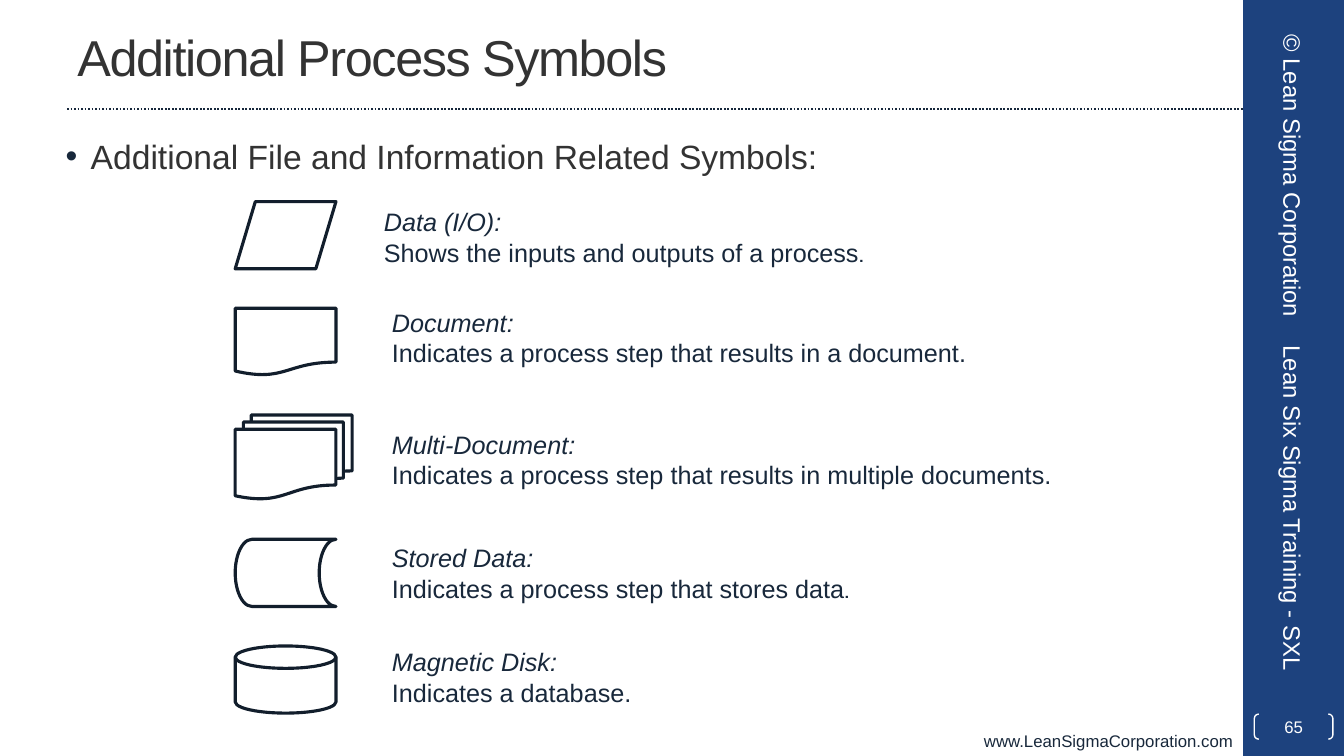
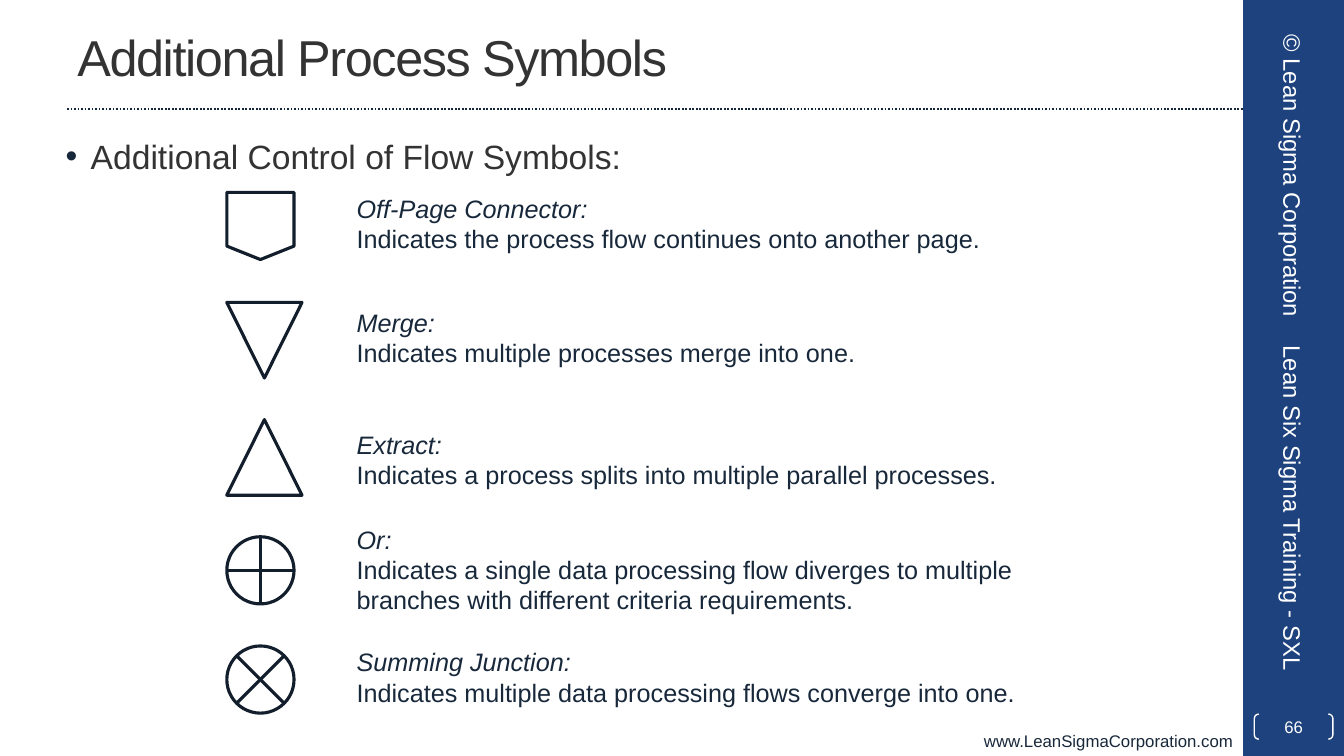
import pptx
import pptx.dml.color
import pptx.enum.dml
import pptx.enum.shapes
import pptx.enum.text
import pptx.oxml.ns
import pptx.util
from lxml import etree

SHAPE = pptx.enum.shapes.MSO_SHAPE
ALIGN = pptx.enum.text.PP_ALIGN
MIDDLE = pptx.enum.text.MSO_ANCHOR.MIDDLE
qn = pptx.oxml.ns.qn

# The grid: 40 columns by 90 rows
COLUMNS, ROWS = 40, 90
WIDTH, HEIGHT = pptx.util.Inches(13.33), pptx.util.Inches(7.5)

COLOURS = {
    "band": "1D427E",
    "rule": "17273B",
    "outline": "121E2C",
    "ink": "18283B",
    "heading": "333333",
    "white": "FFFFFF",
}

# Text styles: colour name, then font attributes
STYLES = {
    "title": ("heading", {"size": 36}),
    "lead": ("heading", {"size": 24}),
    "term": ("ink", {"size": 18, "italic": True}),
    "meaning": ("ink", {"size": 18, "italic": False}),
    "stop": ("ink", {"size": 18, "italic": False, "name": "Cabin"}),
    "site": ("ink", {"size": 12}),
    "number": ("white", {"size": 12}),
    "side": ("white", {"size": 17}),
}


def colour(name):
    return pptx.dml.color.RGBColor.from_string(COLOURS[name])


class SymbolDeck:
    """Holds the deck, its style and the current page."""

    def __init__(self, first_number):
        self.deck = pptx.Presentation()
        self.deck.slide_width, self.deck.slide_height = WIDTH, HEIGHT
        self.number = first_number - 1
        self.page = None

    def place(self, left, top, width, height):
        return (round(left * WIDTH / COLUMNS), round(top * HEIGHT / ROWS),
                round(width * WIDTH / COLUMNS), round(height * HEIGHT / ROWS))

    def fill_text(self, box, paragraphs, align=ALIGN.LEFT, **frame_format):
        """Fill a box; each paragraph is a list of (text, style) spans."""
        frame = box.text_frame
        settings = {"word_wrap": True,
                    "auto_size": pptx.enum.text.MSO_AUTO_SIZE.NONE, **frame_format}
        for key, value in settings.items():
            setattr(frame, key, value)
        for index, spans in enumerate(paragraphs):
            para = frame.paragraphs[0] if index == 0 else frame.add_paragraph()
            para.alignment = align
            para.space_before = pptx.util.Pt(0)
            for text, style in spans:
                span = para.add_run()
                span.text = text
                ink, values = STYLES[style]
                for key, value in {"name": "Arial", **values}.items():
                    setattr(span.font, key, pptx.util.Pt(value) if key == "size" else value)
                span.font.color.rgb = colour(ink)
        return frame

    def text(self, area, paragraphs, rotation=0, **settings):
        box = self.page.shapes.add_textbox(*self.place(*area))
        box.rotation = rotation
        self.fill_text(box, paragraphs, **settings)

    def shape(self, kind, area, fill=None, line=None, weight=1):
        box = self.page.shapes.add_shape(kind, *self.place(*area))
        box.shadow.inherit = False
        if fill:
            box.fill.solid()
            box.fill.fore_color.rgb = colour(fill)
        else:
            box.fill.background()
        if line:
            box.line.color.rgb = colour(line)
            box.line.width = pptx.util.Pt(weight)
        else:
            box.line.fill.background()
        return box

    def rule(self, left, top, right):
        x1, y, x2, _ = self.place(left, top, right, 0)
        line = self.page.shapes.add_connector(
            pptx.enum.shapes.MSO_CONNECTOR.STRAIGHT, x1, y, x2, y)
        line.line.color.rgb = colour("rule")
        line.line.width = pptx.util.Pt(1.25)
        line.line.dash_style = pptx.enum.dml.MSO_LINE.ROUND_DOT
        etree.SubElement(line._element.spPr, qn("a:effectLst"))

    def placeholder(self, box, area):
        box.left, box.top, box.width, box.height = self.place(*area)
        return box

    def title(self, text):
        box = self.placeholder(self.page.shapes.title, (2, 0.4, 33.33, 12.6))
        frame = self.fill_text(box, [[(text, "title")]], vertical_anchor=MIDDLE)
        frame.paragraphs[0].runs[0].font._element.set("spc", "-100")

    def lead(self, text):
        box = self.placeholder(self.page.placeholders[1], (1.26, 15, 35.34, 72))
        frame = self.fill_text(box, [[(text, "lead")]], margin_top=pptx.util.Inches(0.1))
        settings = frame.paragraphs[0]._p.get_or_add_pPr()
        settings.set("marL", str(pptx.util.Inches(0.38)))
        settings.set("indent", str(pptx.util.Inches(-0.25)))
        tint = etree.SubElement(settings, qn("a:buClr"))
        etree.SubElement(tint, qn("a:srgbClr"), val=COLOURS["ink"])
        etree.SubElement(settings, qn("a:buFont"), typeface="Arial")
        etree.SubElement(settings, qn("a:buChar"), char="•")

    def frame(self):
        """Side band, rule, site address and page number."""
        self.shape(SHAPE.RECTANGLE, (37, 0, 3, ROWS), fill="band")
        self.text((0, 86.4, 37, 3.6), [[("www.LeanSigmaCorporation.com", "site")]],
                  align=ALIGN.RIGHT)
        self.rule(2, 13, 37)
        bracket = self.shape(SHAPE.DOUBLE_BRACKET, (37.33, 85, 2.34, 3), line="white")
        bracket.adjustments[0] = 0.18
        margins = dict.fromkeys(
            ("margin_left", "margin_top", "margin_right", "margin_bottom"), 0)
        self.fill_text(bracket, [[(str(self.number), "number")]], align=ALIGN.CENTER,
                       vertical_anchor=MIDDLE, **margins)
        for text, area, align in (
                ("© Lean Sigma Corporation", (33.72, 17.76, 9.51, 6.36), ALIGN.CENTER),
                ("Lean Six Sigma Training - SXL", (32.97, 58.8, 11.01, 6.36), ALIGN.LEFT)):
            self.text(area, [[(text, "side")]], rotation=90, align=align,
                      vertical_anchor=MIDDLE)

    def symbol(self, kind, area, text_left, text_top, term, meaning,
               stop=None, text_height=8.5):
        """A flowchart symbol with its term and meaning."""
        self.shape(kind, area, line="outline", weight=2.25)
        spans = [(meaning, "meaning")] + ([(stop, "stop")] if stop else [])
        self.text((text_left, text_top, 21, text_height), [[(term, "term")], spans])

    def add_page(self, title, lead, symbols):
        self.page = self.deck.slides.add_slide(self.deck.slide_layouts[1])
        self.number += 1
        self.frame()
        self.title(title)
        self.lead(lead)
        for values in symbols:
            self.symbol(**values)


def entry(kind, area, text_left, text_top, term, meaning, **extra):
    return dict(kind=kind, area=area, text_left=text_left, text_top=text_top,
                term=term, meaning=meaning, **extra)


# Symbol area: left, top, width, height in columns and rows
FILE_LEFT, FILE_TEXT = 7, 11.37
FILE_SYMBOLS = [
    entry(SHAPE.FLOWCHART_DATA, (FILE_LEFT, 24, 3, 8), 11.13, 24,
          "Data (I/O):", "Shows the inputs and outputs of a process", stop="."),
    entry(SHAPE.FLOWCHART_DOCUMENT, (FILE_LEFT, 36.7, 3, 8), FILE_TEXT, 36,
          "Document:", "Indicates a process step that results in a document."),
    entry(SHAPE.FLOWCHART_MULTIDOCUMENT, (FILE_LEFT, 49.4, 3.48, 10), FILE_TEXT, 50.5,
          "Multi-Document:", "Indicates a process step that results in multiple documents."),
    entry(SHAPE.FLOWCHART_STORED_DATA, (FILE_LEFT, 64.2, 3, 8), FILE_TEXT, 64,
          "Stored Data:", "Indicates a process step that stores data", stop="."),
    entry(SHAPE.FLOWCHART_MAGNETIC_DISK, (FILE_LEFT, 76.9, 3, 8), FILE_TEXT, 76.4,
          "Magnetic Disk:", "Indicates a database."),
]

FLOW_LEFT, FLOW_TEXT = 6.75, 10.32
FLOW_SYMBOLS = [
    entry(SHAPE.FLOWCHART_OFFPAGE_CONNECTOR, (FLOW_LEFT, 22.9, 2, 8), FLOW_TEXT, 22.4,
          "Off-Page Connector:", "Indicates the process flow continues onto another page."),
    entry(SHAPE.FLOWCHART_MERGE, (FLOW_LEFT, 36, 2.24, 9), FLOW_TEXT, 36,
          "Merge:", "Indicates multiple processes merge into one."),
    entry(SHAPE.FLOWCHART_EXTRACT, (FLOW_LEFT, 49.95, 2.24, 9), FLOW_TEXT, 50.5,
          "Extract:", "Indicates a process splits into multiple parallel processes."),
    entry(SHAPE.FLOWCHART_OR, (FLOW_LEFT, 63.9, 2, 8), FLOW_TEXT, 61.8,
          "Or:", "Indicates a single data processing flow diverges to multiple "
          "branches with different criteria requirements.", text_height=12.1),
    entry(SHAPE.FLOWCHART_SUMMING_JUNCTION, (FLOW_LEFT, 76.9, 2, 8), FLOW_TEXT, 76.4,
          "Summing Junction:", "Indicates multiple data processing flows converge into one."),
]


def main():
    symbol_deck = SymbolDeck(first_number=65)
    title = "Additional Process Symbols"
    symbol_deck.add_page(title, "Additional File and Information Related Symbols:",
                         FILE_SYMBOLS)
    symbol_deck.add_page(title, "Additional Control of Flow Symbols:", FLOW_SYMBOLS)
    symbol_deck.deck.save("out.pptx")


if __name__ == "__main__":
    main()
